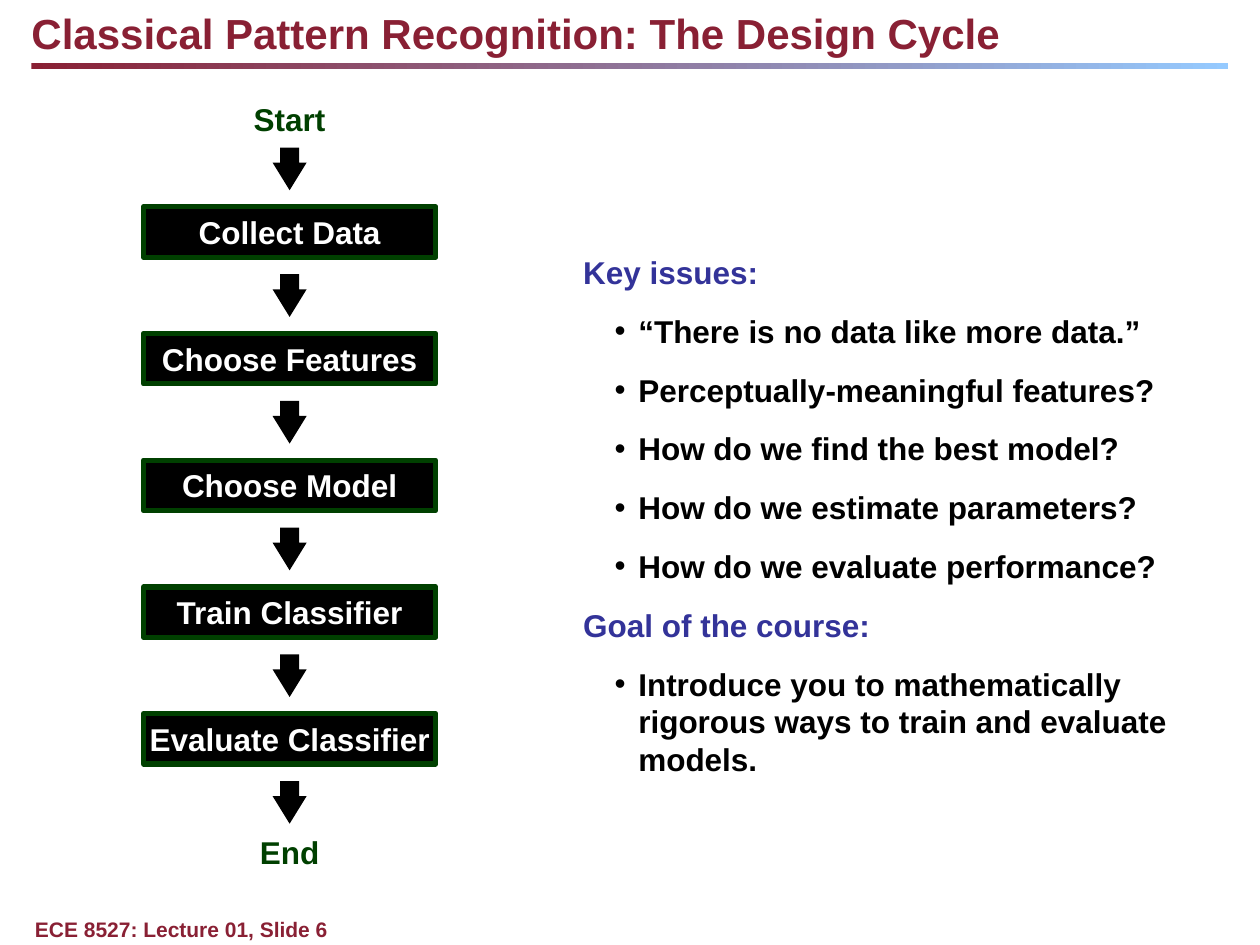
from pptx import Presentation
from pptx import util as u
from pptx.dml import color
from pptx.enum import shapes, text
from pptx.oxml import ns
from lxml import etree

Pt = u.Pt
HUES = {"wine": "892034", "sky": "95CAFF", "green": "004000",
        "blue": "333399", "black": "000000", "white": "FFFFFF"}
STEPS = ["Collect Data", "Choose Features", "Choose Model",
         "Train Classifier", "Evaluate Classifier"]
NOTES = [
    ("Key issues:", [
        "“There is no data like more data.”",
        "Perceptually-meaningful features?",
        "How do we find the best model?",
        "How do we estimate parameters?",
        "How do we evaluate performance?"]),
    ("Goal of the course:", [
        "Introduce you to mathematically rigorous ways to train "
        "and evaluate models."]),
]
ALIGN = text.PP_ALIGN
ANCHOR = text.MSO_ANCHOR


def hue(name):
    return color.RGBColor.from_string(HUES[name])


def put(item, **values):
    for key, value in values.items():
        setattr(item, key, value)


def style(para, tint, size=18):
    put(para.font, name="Arial", size=Pt(size), bold=True)
    para.font.color.rgb = hue(tint)


def write(shape, words, tint, size=18, align=ALIGN.LEFT, anchor=ANCHOR.TOP):
    """Fill a shape with one line of text, without margins."""
    frame = shape.text_frame
    put(frame, word_wrap=True, vertical_anchor=anchor, margin_left=0,
        margin_right=0, margin_top=0, margin_bottom=0)
    para = frame.paragraphs[0]
    put(para, text=words, alignment=align)
    style(para, tint, size)


def label(slide, box, words, tint, **look):
    write(slide.shapes.add_textbox(*map(Pt, box)), words, tint, **look)


def solid(slide, kind, box, tint="black"):
    shape = slide.shapes.add_shape(kind, *map(Pt, box))
    shape.shadow.inherit = False
    shape.fill.solid()
    shape.fill.fore_color.rgb = hue(tint)
    shape.line.fill.background()
    return shape


def header(slide, box):
    left, top, width, height = box
    label(slide, (left, top, width, 28.8),
          "Classical Pattern Recognition: The Design Cycle", "wine", size=24)
    rule = solid(slide, shapes.MSO_SHAPE.RECTANGLE,
                 (left, top + height - 3.6, width, 3.6))
    rule.fill.gradient()
    rule.fill.gradient_angle = 0
    for stop, tint in zip(rule.fill.gradient_stops, ("wine", "sky")):
        stop.color.rgb = hue(tint)


def arrow(slide, mid, top):
    wide, high = 19.5, 24.4
    shape = solid(slide, shapes.MSO_SHAPE.DOWN_ARROW,
                  (mid - wide / 2, top, wide, high))
    shape.adjustments[0] = 0.56
    shape.adjustments[1] = 0.81


def flow(slide, box):
    """Draw the steps from Start to End, with an arrow before each."""
    left, top, width, height = box
    mid = left + width / 2
    line, first, pitch, gap = 21.6, 27.3, 72.4, 33.9
    look = {"align": ALIGN.CENTER, "anchor": ANCHOR.MIDDLE}
    label(slide, (mid - 45, top, 90, line), "Start", "green", **look)
    for i, step in enumerate(STEPS):
        y = top + first + i * pitch
        arrow(slide, mid, y)
        card = solid(slide, shapes.MSO_SHAPE.RECTANGLE,
                     (left, y + gap, width, 28.8))
        card.line.color.rgb = hue("green")
        card.line.width = Pt(3)
        write(card, step, "white", **look)
    arrow(slide, mid, top + first + len(STEPS) * pitch)
    label(slide, (mid - 30, top + height - line, 60, line),
          "End", "green", **look)


def indent(para, left, hang, mark=None):
    props = para._p.get_or_add_pPr()
    props.set("marL", str(int(Pt(left))))
    props.set("indent", str(int(Pt(-hang))))
    if mark:
        etree.SubElement(props, ns.qn("a:buFont")).set("typeface", "Arial")
        etree.SubElement(props, ns.qn("a:buChar")).set("char", mark)


def notes(slide, box):
    frame = slide.shapes.add_textbox(*map(Pt, box)).text_frame
    frame.word_wrap = True
    fresh = frame.paragraphs[0]
    for head, points in NOTES:
        for i, words in enumerate([head, *points]):
            para = fresh or frame.add_paragraph()
            fresh = None
            put(para, text=words, space_after=Pt(12), level=min(i, 1))
            if i:
                indent(para, 31.5, 13.5, "•")
            else:
                indent(para, 9, 9)
            style(para, "black" if i else "blue")


def main():
    deck = Presentation()
    put(deck, slide_width=Pt(720), slide_height=Pt(540))
    slide = deck.slides.add_slide(deck.slide_layouts[6])
    header(slide, (18, 4.3, 684, 35.3))
    flow(slide, (82, 57, 167, 440.5))
    notes(slide, (326.2, 141.1, 374.4, 310.3))
    label(slide, (20, 523.5, 642, 14.4),
          "ECE 8527: Lecture 01, Slide 6", "wine", size=12)
    deck.save("out.pptx")


if __name__ == "__main__":
    main()
